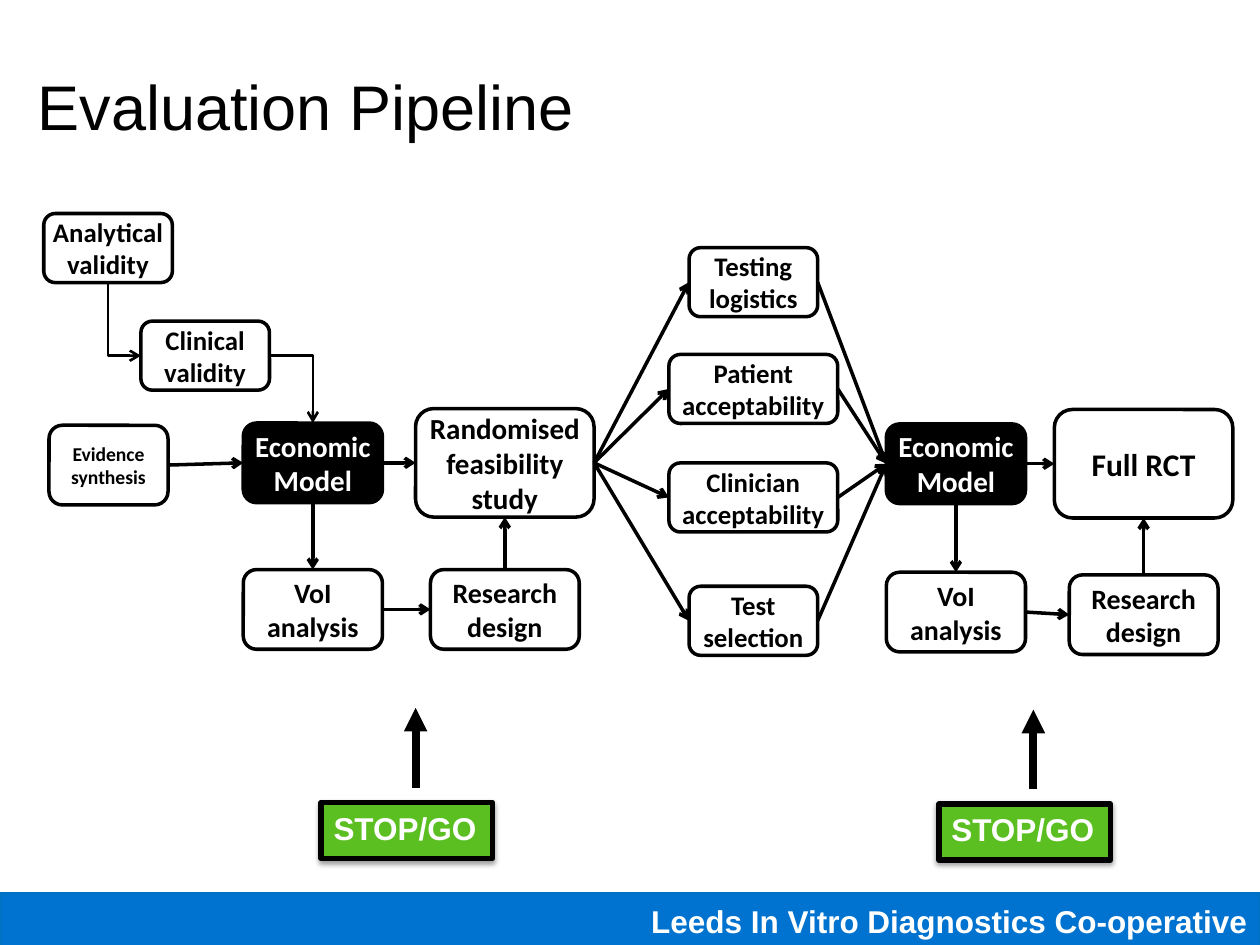
from dataclasses import dataclass

from lxml import etree
from pptx import Presentation
from pptx.dml.color import RGBColor
from pptx.enum.shapes import MSO_CONNECTOR as CONNECTOR, MSO_SHAPE as SHAPE
from pptx.enum.text import MSO_ANCHOR as ANCHOR, PP_ALIGN as ALIGN
from pptx.oxml.ns import qn
from pptx.util import Pt


@dataclass(frozen=True)
class Theme:
    black: RGBColor = RGBColor(0, 0, 0)
    white: RGBColor = RGBColor(255, 255, 255)
    green: RGBColor = RGBColor(0x5B, 0xBF, 0x21)
    blue: RGBColor = RGBColor(0x00, 0x72, 0xCF)
    blue_line: RGBColor = RGBColor(0x00, 0x72, 0xC6)
    heading_font: str = "Arial"
    box_font: str = "Calibri"
    title: float = 36
    label: float = 18
    model: float = 16.6
    step: float = 16
    check: float = 15.3
    evidence: float = 11.2
    line: float = 2


THEME = Theme()
TOP, LEFT, BOTTOM, RIGHT = range(4)
STEP_HEIGHT = 45.5
CHECK_WIDTH, CHECK_HEIGHT = 73.5, 39.5
STUDY_WIDTH, STUDY_HEIGHT = 102, 62


def write(shape, text, size, color, font, bold=True, align=ALIGN.CENTER, anchor=ANCHOR.MIDDLE):
    frame = shape.text_frame
    frame.word_wrap = True
    frame.vertical_anchor = anchor
    paragraph = frame.paragraphs[0]
    paragraph.alignment = align
    run = paragraph.add_run()
    run.text = text
    run.font.size = Pt(size)
    run.font.name = font
    run.font.bold = bold
    run.font.color.rgb = color


def add_panel(slide, kind, box, fill, line, width):
    shape = slide.shapes.add_shape(kind, *map(Pt, box))
    shape.shadow.inherit = False
    shape.fill.solid()
    shape.fill.fore_color.rgb = fill
    shape.line.color.rgb = line
    shape.line.width = Pt(width)
    return shape


def add_step(slide, box, text, size, dark=False, inset=2.9):
    fill, color = (THEME.black, THEME.white) if dark else (THEME.white, THEME.black)
    shape = add_panel(slide, SHAPE.ROUNDED_RECTANGLE, box, fill, THEME.black, THEME.line)
    frame = shape.text_frame
    frame.margin_left = frame.margin_right = Pt(inset)
    frame.margin_top = frame.margin_bottom = Pt(2.9)
    write(shape, text, size, color, THEME.box_font)
    return shape


def style_arrow(connector, width, head="arrow"):
    connector.line.color.rgb = THEME.black
    connector.line.width = Pt(width)
    tail = etree.SubElement(connector.line._get_or_add_ln(), qn("a:tailEnd"))
    tail.set("type", head)
    etree.SubElement(connector._element.spPr, qn("a:effectLst"))


def link(slide, source, source_side, target, target_side):
    connector = slide.shapes.add_connector(CONNECTOR.STRAIGHT, 0, 0, 0, 0)
    connector.begin_connect(source, source_side)
    connector.end_connect(target, target_side)
    style_arrow(connector, THEME.line)


def link_corner(slide, start, end, down_first=False):
    (x1, y1), (x2, y2) = start, end
    if down_first:
        center_x, center_y = (x1 + x2) // 2, (y1 + y2) // 2
        half_x, half_y = (x2 - x1) // 2, (y2 - y1) // 2
        x1, y1 = center_x + half_y, center_y - half_x
        x2, y2 = center_x - half_y, center_y + half_x
    connector = slide.shapes.add_connector(CONNECTOR.ELBOW, x1, y1, x2, y2)
    properties = connector._element.spPr
    properties.find(qn("a:prstGeom")).set("prst", "bentConnector2")
    if down_first:
        properties.find(qn("a:xfrm")).set("rot", str(270 * 60000))
    style_arrow(connector, 1.5)


def add_title(slide, box):
    shape = slide.shapes.add_textbox(*map(Pt, box))
    write(shape, "Evaluation Pipeline", THEME.title, THEME.black, THEME.heading_font,
          bold=False, align=ALIGN.LEFT)


def add_footer(slide, box):
    shape = add_panel(slide, SHAPE.RECTANGLE, box, THEME.blue, THEME.blue_line, THEME.line)
    write(shape, "Leeds In Vitro Diagnostics Co-operative", THEME.label, THEME.white,
          THEME.heading_font, align=ALIGN.RIGHT)


def add_stage(slide, left, top, study_offset, study_text, study_size, analysis_top, design_top):
    study_left = left + study_offset
    design_width = 85
    design_left = study_left + (STUDY_WIDTH - design_width) / 2
    model_top = top + (STUDY_HEIGHT - STEP_HEIGHT) / 2
    model = add_step(slide, (left, model_top, 79.5, STEP_HEIGHT), "Economic Model",
                     THEME.model, dark=True)
    study = add_step(slide, (study_left, top, STUDY_WIDTH, STUDY_HEIGHT), study_text, study_size)
    analysis = add_step(slide, (left, top + analysis_top, 79.5, STEP_HEIGHT), "VoI analysis",
                        THEME.step, inset=7.2)
    design = add_step(slide, (design_left, top + design_top, design_width, STEP_HEIGHT),
                      "Research design", THEME.step, inset=7.2)
    link(slide, model, RIGHT, study, LEFT)
    link(slide, model, BOTTOM, analysis, TOP)
    link(slide, analysis, RIGHT, design, LEFT)
    link(slide, design, TOP, study, BOTTOM)
    return model, study


def add_inputs(slide, left, top, model):
    size = (CHECK_WIDTH, CHECK_HEIGHT)
    analytical = add_step(slide, (left, top, *size), "Analytical validity", THEME.check)
    clinical = add_step(slide, (left + 55.5, top + 61.5, *size), "Clinical validity", THEME.check)
    evidence = add_step(slide, (left + 3, top + 121, 68, STEP_HEIGHT), "Evidence synthesis",
                        THEME.evidence, inset=7.2)
    clinical_middle = clinical.top + clinical.height // 2
    link_corner(slide,
                (analytical.left + analytical.width // 2, analytical.top + analytical.height),
                (clinical.left, clinical_middle), down_first=True)
    link_corner(slide, (clinical.left + clinical.width, clinical_middle),
                (model.left + model.width // 2, model.top))
    link(slide, evidence, RIGHT, model, LEFT)


def add_checks(slide, center, top, study, model):
    wide = 96.5
    checks = [
        ("Testing logistics", 0, CHECK_WIDTH),
        ("Patient acceptability", 61, wide),
        ("Clinician acceptability", 123, wide),
        ("Test selection", 193.5, CHECK_WIDTH),
    ]
    for text, offset, width in checks:
        box = (center - width / 2, top + offset, width, CHECK_HEIGHT)
        check = add_step(slide, box, text, THEME.check)
        link(slide, study, RIGHT, check, LEFT)
        link(slide, check, RIGHT, model, LEFT)


def add_gate(slide, left, top):
    shape = add_panel(slide, SHAPE.RECTANGLE, (left, top, 98, 32), THEME.green, THEME.black, 3)
    write(shape, "STOP/GO", THEME.label, THEME.white, THEME.heading_font,
          align=ALIGN.LEFT, anchor=ANCHOR.TOP)
    effects = shape._element.spPr.find(qn("a:effectLst"))
    shadow = etree.SubElement(effects, qn("a:outerShdw"), blurRad=str(Pt(3.1)),
                              dist=str(Pt(1.6)), dir=str(90 * 60000), rotWithShape="0")
    color = etree.SubElement(shadow, qn("a:srgbClr"), val=str(THEME.black))
    etree.SubElement(color, qn("a:alpha"), val="38000")
    arrow_x = Pt(left + 54)
    arrow = slide.shapes.add_connector(CONNECTOR.STRAIGHT, arrow_x, Pt(top - 8.5),
                                       arrow_x, Pt(top - 54))
    style_arrow(arrow, 4.5, "triangle")


def main():
    presentation = Presentation()
    presentation.slide_width, presentation.slide_height = Pt(720), Pt(540)
    slide = presentation.slides.add_slide(presentation.slide_layouts[6])
    add_footer(slide, (0, 510.5, 720, 31.5))
    add_title(slide, (14.5, 15, 648, 90))
    first_model, feasibility = add_stage(slide, 139, 233.5, 98.5, "Randomised feasibility study",
                                         THEME.model, 92, 92)
    second_model, _ = add_stage(slide, 506.5, 234, 96, "Full RCT", THEME.label, 93, 94.5)
    add_inputs(slide, 25, 122, first_model)
    add_checks(slide, 430.5, 141.5, feasibility, second_model)
    add_gate(slide, 183.5, 458.5)
    add_gate(slide, 536.5, 459.5)
    presentation.save("out.pptx")


if __name__ == "__main__":
    main()
